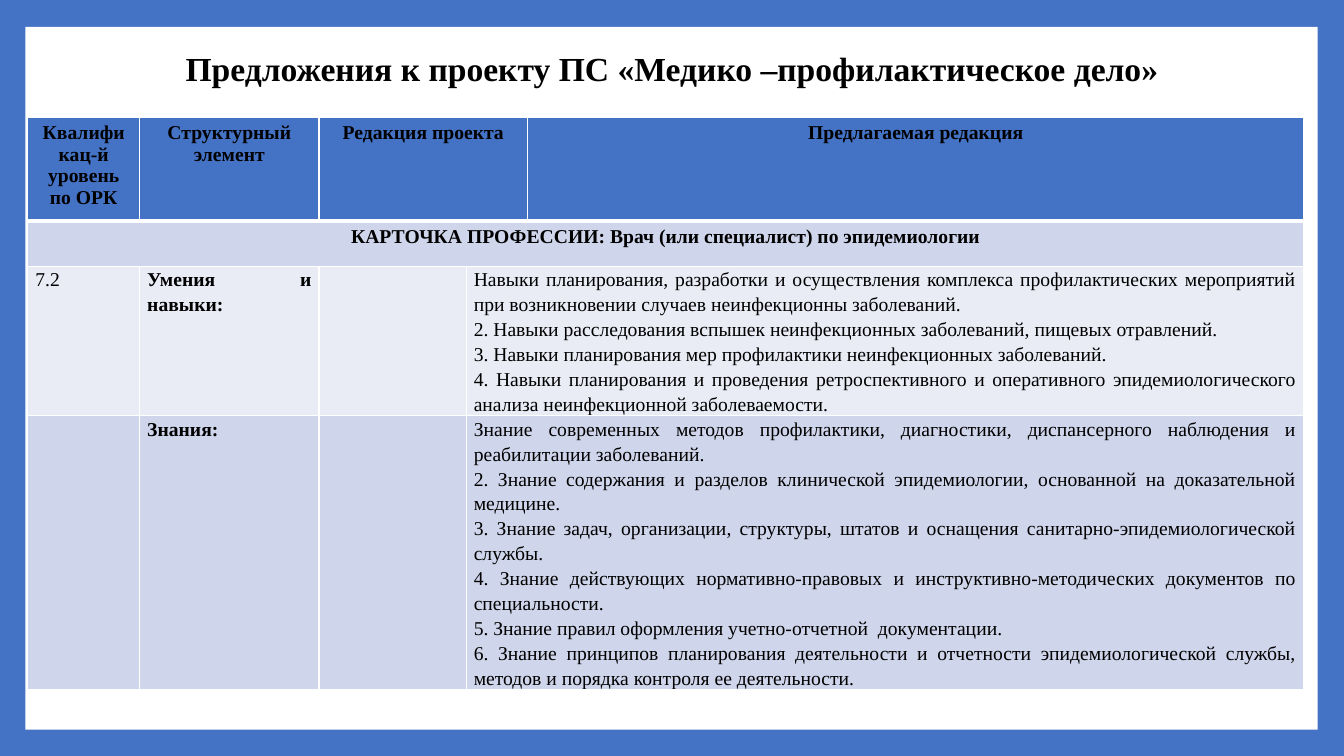
from lxml.etree import SubElement
from pptx import Presentation
from pptx.dml.color import RGBColor
from pptx.enum.shapes import MSO_SHAPE
from pptx.enum.text import MSO_ANCHOR, PP_ALIGN
from pptx.oxml.ns import qn
from pptx.util import Cm, Pt

COLORS = {"blue": "4472C4", "white": "FFFFFF", "black": "000000",
          "band": "CFD5EA", "light": "E9EBF5"}
FONT = "Times New Roman"
COLUMN_WIDTHS = [2.82, 4.52, 3.71, 1.55, 19.56]
ROW_HEIGHTS = [2.62, 1.14, 3.76, 6.88]

HEADINGS = {0: "Квалификац-й уровень по ОРК", 1: "Структурный элемент",
            2: "Редакция проекта", 4: "Предлагаемая редакция"}
PROFESSION = "КАРТОЧКА ПРОФЕССИИ: Врач (или специалист) по эпидемиологии"
SKILLS = [
    "Навыки планирования, разработки и осуществления комплекса профилактических "
    "мероприятий при возникновении случаев неинфекционны заболеваний. ",
    "2. Навыки расследования вспышек неинфекционных заболеваний, пищевых отравлений.",
    "3. Навыки планирования мер профилактики неинфекционных заболеваний.",
    "4. Навыки планирования и проведения ретроспективного и оперативного "
    "эпидемиологического анализа неинфекционной заболеваемости.",
]
KNOWLEDGE = [
    "Знание современных методов профилактики, диагностики, диспансерного наблюдения "
    "и реабилитации заболеваний. ",
    "2. Знание содержания и разделов клинической эпидемиологии, основанной на "
    "доказательной медицине.",
    "3. Знание задач, организации, структуры, штатов и оснащения "
    "санитарно-эпидемиологической службы. ",
    "4. Знание действующих нормативно-правовых и инструктивно-методических "
    "документов по специальности. ",
    "5. Знание правил оформления учетно-отчетной  документации. ",
    "6. Знание принципов планирования деятельности и отчетности эпидемиологической "
    "службы, методов и порядка контроля ее деятельности.",
]
BODY_ROWS = [("7.2", "Умения и навыки:", SKILLS), ("", "Знания:", KNOWLEDGE)]


def color(name):
    return RGBColor.from_string(COLORS[name])


def write(frame, lines, size=14, bold=False, align=PP_ALIGN.CENTER, spacing=1.0):
    """Fill a text frame with one paragraph per line."""
    for index, line in enumerate(lines):
        para = frame.paragraphs[0] if index == 0 else frame.add_paragraph()
        para.alignment = align
        para.line_spacing = spacing
        para.font.size = Pt(size)
        span = para.add_run()
        span.text = line
        span.font.name = FONT
        span.font.size = Pt(size)
        span.font.bold = bold
        span.font.color.rgb = color("black")


def style_cell(cell, fill, top=1, bottom=1):
    """Set the fill and the white borders of a cell."""
    cell.fill.solid()
    cell.fill.fore_color.rgb = color(fill)
    properties = cell._tc.get_or_add_tcPr()
    widths = {"a:lnL": 1, "a:lnR": 1, "a:lnT": top, "a:lnB": bottom}
    for index, (tag, width) in enumerate(widths.items()):
        line = SubElement(properties, qn(tag), w=str(Pt(width)))
        paint = SubElement(line, qn("a:solidFill"))
        SubElement(paint, qn("a:srgbClr"), val=COLORS["white"])
        properties.insert(index, line)


def add_panel(page, left, top, width, height):
    """White sheet on the blue background, behind the title."""
    page.background.fill.solid()
    page.background.fill.fore_color.rgb = color("blue")
    panel = page.shapes.add_shape(MSO_SHAPE.RECTANGLE, left, top, width, height)
    panel.shadow.inherit = False
    panel.fill.solid()
    panel.fill.fore_color.rgb = color("white")
    panel.line.fill.background()
    page.shapes._spTree.insert(2, panel._element)


def add_title(page, left, top, width, height):
    title = page.shapes.title
    title.left, title.top, title.width, title.height = left, top, width, height
    title.text_frame.vertical_anchor = MSO_ANCHOR.MIDDLE
    write(title.text_frame, ["Предложения к проекту ПС «Медико –профилактическое дело»"],
          size=24, bold=True, spacing=0.9)


def add_proposals(page, left, top, width, height):
    table = page.shapes.add_table(len(ROW_HEIGHTS), len(COLUMN_WIDTHS),
                                  left, top, width, height).table
    table.horz_banding = False
    for column, size in zip(table.columns, COLUMN_WIDTHS):
        column.width = Cm(size)
    for row, size in zip(table.rows, ROW_HEIGHTS):
        row.height = Cm(size)

    # Fills and borders, with a thick rule under the header
    for index, fill in enumerate(["blue", "band", "light", "band"]):
        for cell in table.rows[index].cells:
            style_cell(cell, fill, top=3 if index == 1 else 1,
                       bottom=3 if index == 0 else 1)

    # Header and profession rows
    table.cell(0, 2).merge(table.cell(0, 3))
    for column, heading in HEADINGS.items():
        write(table.cell(0, column).text_frame, [heading], bold=True)
    table.cell(1, 0).merge(table.cell(1, 4))
    write(table.cell(1, 0).text_frame, [PROFESSION], bold=True)

    # Body rows
    for row, (level, element, proposals) in enumerate(BODY_ROWS, start=2):
        table.cell(row, 3).merge(table.cell(row, 4))
        contents = {0: [level] if level else [], 1: [element], 3: proposals}
        for column, lines in contents.items():
            cell = table.cell(row, column)
            cell.margin_left = cell.margin_right = Cm(0.19)
            cell.margin_top = cell.margin_bottom = 0
            write(cell.text_frame, lines, bold=column == 1,
                  align=PP_ALIGN.JUSTIFY, spacing=1.15)


def main():
    deck = Presentation()
    deck.slide_width, deck.slide_height = Cm(33.87), Cm(19.05)
    page = deck.slides.add_slide(deck.slide_layouts[5])
    add_panel(page, Cm(0.64), Cm(0.68), Cm(32.57), Cm(17.71))
    add_title(page, Cm(2.33), Cm(0.89), Cm(29.21), Cm(1.8))
    add_proposals(page, Cm(0.7), Cm(2.95), Cm(sum(COLUMN_WIDTHS)), Cm(sum(ROW_HEIGHTS)))
    deck.save("out.pptx")


if __name__ == "__main__":
    main()
